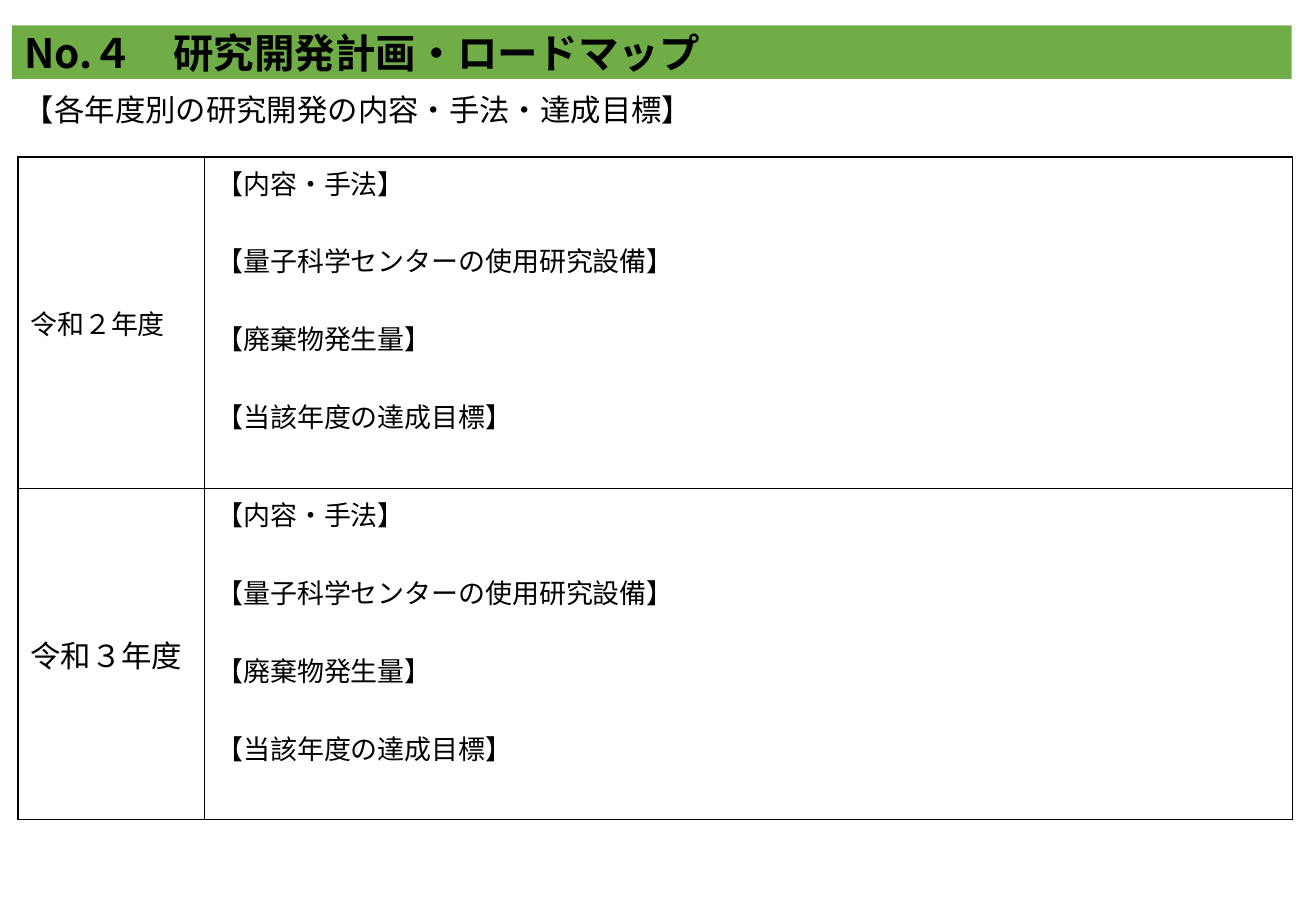
from dataclasses import dataclass

from lxml.etree import SubElement
from pptx import Presentation
from pptx.dml.color import RGBColor as RGB
from pptx.enum.text import MSO_ANCHOR as Anchor, MSO_AUTO_SIZE as AutoSize, PP_ALIGN as Align
from pptx.oxml.ns import qn
from pptx.util import Cm, Pt

TITLE = "No.４　研究開発計画・ロードマップ"
SUBTITLE = "【各年度別の研究開発の内容・手法・達成目標】"
TOPICS = [
    "【内容・手法】",
    "【量子科学センターの使用研究設備】",
    "【廃棄物発生量】",
    "【当該年度の達成目標】",
]
YEARS = [("令和２年度", 16), ("令和３年度", 18)]


@dataclass(frozen=True)
class Theme:
    font: str = "Noto Sans CJK JP"
    ink: RGB = RGB(0, 0, 0)
    band: RGB = RGB(0x70, 0xAD, 0x47)
    title: int = 24
    subtitle: int = 18
    body: int = 16
    topic_gap: float = 23.1
    border: int = 1


THEME = Theme()
SLIDE_W, SLIDE_H = Cm(27.51), Cm(19.05)
LEFT = Cm(0.25)
TABLE_LEFT, TABLE_TOP = Cm(0.38), Cm(3.28)
COL_WIDTHS = [Cm(3.89), Cm(22.75)]
ROW_H = Cm(6.93)


def add_run(p, text, size, bold=False):
    r = p.add_run()
    r.text = text
    font = r.font
    font.name, font.size, font.bold = THEME.font, Pt(size), bold
    font.color.rgb = THEME.ink
    SubElement(r._r.get_or_add_rPr(), qn("a:ea"), typeface=THEME.font)


def place(sp, left, top, width, height):
    sp.left, sp.top, sp.width, sp.height = left, top, width, height


def frame_cell(cell):
    tcPr = cell._tc.get_or_add_tcPr()
    for side in ("lnL", "lnR", "lnT", "lnB"):
        ln = SubElement(tcPr, qn(f"a:{side}"), w=str(Pt(THEME.border)))
        fill = SubElement(ln, qn("a:solidFill"))
        SubElement(fill, qn("a:srgbClr"), val=str(THEME.ink))
    cell.fill.background()


def add_heading(s):
    sp = s.shapes.title
    place(sp, LEFT, Cm(0.53), Cm(26.75), Cm(1.12))
    sp.fill.solid()
    sp.fill.fore_color.rgb = THEME.band
    tf = sp.text_frame
    tf.auto_size = AutoSize.NONE
    tf.vertical_anchor = Anchor.MIDDLE
    p = tf.paragraphs[0]
    p.alignment = Align.LEFT
    add_run(p, TITLE, THEME.title, bold=True)

    tf = s.shapes.add_textbox(LEFT, Cm(1.78), Cm(17.12), Cm(1.02)).text_frame
    tf.word_wrap = True
    add_run(tf.paragraphs[0], SUBTITLE, THEME.subtitle)


def add_plan(s):
    table = s.shapes.add_table(
        len(YEARS), len(COL_WIDTHS), TABLE_LEFT, TABLE_TOP,
        sum(COL_WIDTHS), ROW_H * len(YEARS),
    ).table
    table.first_row = table.horz_banding = False
    for col, width in zip(table.columns, COL_WIDTHS):
        col.width = width
    for row, (year, size) in zip(table.rows, YEARS):
        row.height = ROW_H
        year_cell, plan_cell = row.cells
        frame_cell(year_cell)
        frame_cell(plan_cell)
        year_cell.vertical_anchor = Anchor.MIDDLE
        p = year_cell.text_frame.paragraphs[0]
        p.alignment = Align.JUSTIFY
        add_run(p, year, size)
        tf = plan_cell.text_frame
        for i, topic in enumerate(TOPICS):
            p = tf.add_paragraph() if i else tf.paragraphs[0]
            p.space_before = Pt(THEME.topic_gap if i else 0)
            add_run(p, topic, THEME.body)


def main():
    prs = Presentation()
    prs.slide_width, prs.slide_height = SLIDE_W, SLIDE_H
    s = prs.slides.add_slide(prs.slide_layouts[5])
    add_heading(s)
    add_plan(s)
    prs.save("out.pptx")


if __name__ == "__main__":
    main()
